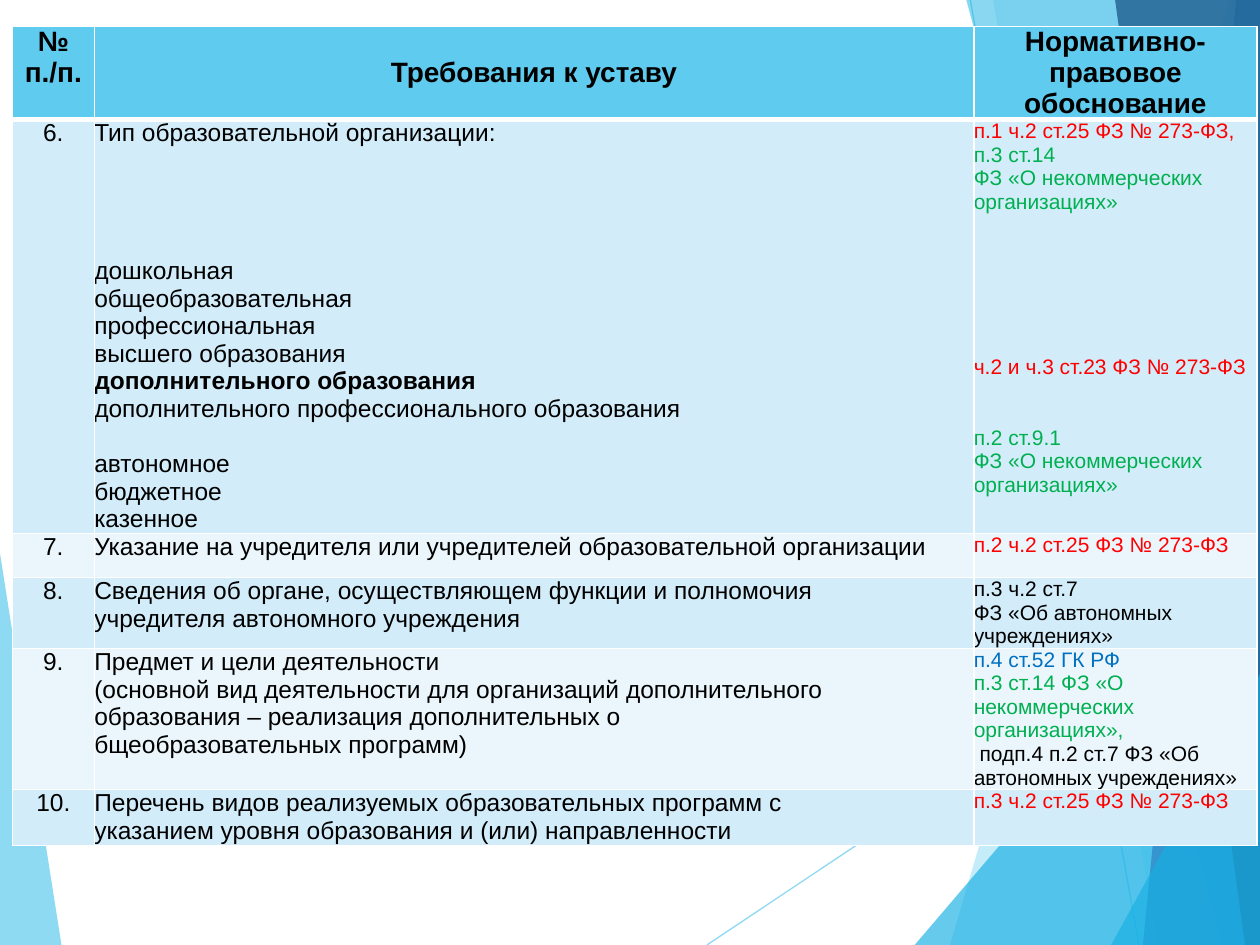
from dataclasses import dataclass

import pptx
import pptx.util
import pptx.dml.color
import pptx.enum.text
import pptx.oxml
import pptx.oxml.ns

Cm = pptx.util.Cm
ALIGN = pptx.enum.text.PP_ALIGN
NAMESPACE = pptx.oxml.ns.nsdecls("a")


@dataclass(frozen=True)
class Theme:
    font: str = "Arial"
    header_size: int = 16
    body_size: int = 14
    reference_size: int = 12
    black: str = "000000"
    white: str = "FFFFFF"
    red: str = "FF0000"
    green: str = "00B050"
    blue: str = "0070C0"
    sky: str = "5FCBEF"
    azure: str = "17B0E4"
    steel: str = "2E83C3"
    navy: str = "226292"
    band_dark: str = "D2ECF9"
    band_light: str = "EAF6FC"


THEME = Theme()


@dataclass(frozen=True)
class Facet:
    color: str
    opacity: int
    points: tuple[tuple[float, float], ...]


@dataclass(frozen=True)
class Ray:
    start: tuple[float, float]
    end: tuple[float, float]


@dataclass(frozen=True)
class Line:
    text: str
    color: str = THEME.black
    bold: bool = False
    space_before: float = 0


@dataclass(frozen=True)
class Requirement:
    number: str
    height: float
    lines: tuple[Line, ...]
    references: tuple[Line, ...]


# Slide and table measures, in centimetres
WIDTH, HEIGHT = 25.4, 19.05
TABLE_LEFT, TABLE_TOP = 0.25, 0.53
COLUMN_WIDTHS = (1.65, 17.73, 5.71)
HEADER_HEIGHT = 1.88

# Background decoration, from back to front
RAYS = (Ray((14.25, HEIGHT), (WIDTH, 11.61)), Ray((19.56, 0), (22.96, HEIGHT)))
LEFT_FACET = Facet(THEME.sky, 70, ((0, 11.15), (1.24, HEIGHT), (0, HEIGHT)))


def right_facet(color: str, opacity: int, top_x: float, bottom_x: float, top: float = 0) -> Facet:
    """A facet that runs from its slanted edge to the right edge of the slide."""
    return Facet(color, opacity, ((top_x, top), (bottom_x, HEIGHT), (WIDTH, HEIGHT), (WIDTH, top)))


RIGHT_FACETS = (
    right_facet(THEME.sky, 36, 24.77, 19.15),
    right_facet(THEME.sky, 20, 20.02, 23.34),
    right_facet(THEME.azure, 66, WIDTH, 18.44, 10.9),
    right_facet(THEME.azure, 50, 19.48, 24.64),
    right_facet(THEME.steel, 70, 24.92, 23.04),
    right_facet(THEME.navy, 82, 22.48, 25.1),
    right_facet(THEME.azure, 66, WIDTH, 22.4, 13.59),
)

# Table content
HEADERS = (("№", "п./п."), ("Требования к уставу",), ("Нормативно-правовое обоснование",))
NONCOMMERCIAL = Line("ФЗ «О некоммерческих организациях»", THEME.green)
REQUIREMENTS = (
    Requirement("6.", 8.32, (
        Line("Тип образовательной организации:"),
        Line("дошкольная", space_before=63),
        Line("общеобразовательная"),
        Line("профессиональная"),
        Line("высшего образования"),
        Line("дополнительного образования", bold=True),
        Line("дополнительного профессионального образования"),
        Line("автономное", space_before=16),
        Line("бюджетное"),
        Line("казенное"),
    ), (
        Line("п.1 ч.2 ст.25 ФЗ № 273-ФЗ,", THEME.red),
        Line("п.3 ст.14", THEME.green),
        NONCOMMERCIAL,
        Line("ч.2 и ч.3 ст.23 ФЗ № 273-ФЗ", THEME.red, space_before=81),
        Line("п.2 ст.9.1", THEME.green, space_before=27),
        NONCOMMERCIAL,
    )),
    Requirement("7.", 0.89, (
        Line("Указание на учредителя или учредителей образовательной организации"),
    ), (Line("п.2 ч.2 ст.25 ФЗ № 273-ФЗ", THEME.red),)),
    Requirement("8.", 1.43, (
        Line("Сведения об органе, осуществляющем функции и полномочия"),
        Line("учредителя автономного учреждения"),
    ), (Line("п.3 ч.2 ст.7"), Line("ФЗ «Об автономных учреждениях»"))),
    Requirement("9.", 2.84, (
        Line("Предмет и цели деятельности"),
        Line("(основной вид деятельности для организаций дополнительного"),
        Line("образования – реализация дополнительных о"),
        Line("бщеобразовательных программ)"),
    ), (
        Line("п.4 ст.52 ГК РФ", THEME.blue),
        Line("п.3 ст.14 ФЗ «О некоммерческих организациях»,", THEME.green),
        Line(" подп.4 п.2 ст.7 ФЗ «Об автономных учреждениях»"),
    )),
    Requirement("10.", 1.13, (
        Line("Перечень видов реализуемых образовательных программ с"),
        Line("указанием уровня образования и (или) направленности"),
    ), (Line("п.3 ч.2 ст.25 ФЗ № 273-ФЗ", THEME.red),)),
)


def rgb(color: str) -> pptx.dml.color.RGBColor:
    return pptx.dml.color.RGBColor.from_string(color)


def set_opacity(shape, percent: int) -> None:
    for color in shape._element.spPr.iter(pptx.oxml.ns.qn("a:srgbClr")):
        color.append(pptx.oxml.parse_xml(f'<a:alpha {NAMESPACE} val="{percent * 1000}"/>'))


def draw_facet(slide, facet: Facet) -> None:
    points = [(Cm(x), Cm(y)) for x, y in facet.points]
    builder = slide.shapes.build_freeform(*points[0])
    builder.add_line_segments(points[1:], close=True)
    shape = builder.convert_to_shape()
    shape.shadow.inherit = False
    shape.line.fill.background()
    shape.fill.solid()
    shape.fill.fore_color.rgb = rgb(facet.color)
    set_opacity(shape, facet.opacity)


def draw_ray(slide, ray: Ray) -> None:
    ends = [Cm(value) for value in ray.start + ray.end]
    connector = slide.shapes.add_connector(pptx.enum.shapes.MSO_CONNECTOR.STRAIGHT, *ends)
    connector.line.color.rgb = rgb(THEME.sky)
    connector.line.width = pptx.util.Pt(0.75)
    set_opacity(connector, 70)
    connector._element.spPr.append(pptx.oxml.parse_xml(f"<a:effectLst {NAMESPACE}/>"))


def set_borders(cell, top: float = 1, bottom: float = 1) -> None:
    properties = cell._tc.get_or_add_tcPr()
    widths = {"lnL": 1, "lnR": 1, "lnT": top, "lnB": bottom}
    for position, (tag, width) in enumerate(widths.items()):
        properties.insert(position, pptx.oxml.parse_xml(
            f'<a:{tag} {NAMESPACE} w="{pptx.util.Pt(width)}"><a:solidFill>'
            f'<a:srgbClr val="{THEME.white}"/></a:solidFill></a:{tag}>'))


def fill_cell(cell, lines: tuple[Line, ...], size: int, alignment, fill: str) -> None:
    cell.margin_left = cell.margin_right = cell.margin_top = cell.margin_bottom = 0
    cell.fill.solid()
    cell.fill.fore_color.rgb = rgb(fill)
    cell.text_frame.text = "\n".join(line.text for line in lines)
    for paragraph, line in zip(cell.text_frame.paragraphs, lines):
        paragraph.alignment = alignment
        paragraph.space_before = pptx.util.Pt(line.space_before)
        for run in paragraph.runs:
            run.font.name = THEME.font
            run.font.size = pptx.util.Pt(size)
            run.font.bold = line.bold
            run.font.color.rgb = rgb(line.color)


def draw_table(slide) -> None:
    heights = [HEADER_HEIGHT] + [requirement.height for requirement in REQUIREMENTS]
    table = slide.shapes.add_table(
        len(heights), len(COLUMN_WIDTHS), Cm(TABLE_LEFT), Cm(TABLE_TOP),
        Cm(sum(COLUMN_WIDTHS)), Cm(sum(heights))).table
    for column, width in zip(table.columns, COLUMN_WIDTHS):
        column.width = Cm(width)
    for row, height in zip(table.rows, heights):
        row.height = Cm(height)

    # Header row
    for column, texts in enumerate(HEADERS):
        cell = table.cell(0, column)
        lines = tuple(Line(text, bold=True) for text in texts)
        fill_cell(cell, lines, THEME.header_size, ALIGN.CENTER, THEME.sky)
        set_borders(cell, bottom=3)
    table.cell(0, 1).vertical_anchor = pptx.enum.text.MSO_ANCHOR.MIDDLE

    # Requirement rows
    for row, requirement in enumerate(REQUIREMENTS, start=1):
        fill = THEME.band_dark if row % 2 else THEME.band_light
        columns = (
            ((Line(requirement.number),), THEME.body_size, ALIGN.CENTER),
            (requirement.lines, THEME.body_size, ALIGN.JUSTIFY),
            (requirement.references, THEME.reference_size, ALIGN.LEFT),
        )
        for column, (lines, size, alignment) in enumerate(columns):
            cell = table.cell(row, column)
            fill_cell(cell, lines, size, alignment, fill)
            set_borders(cell, top=3 if row == 1 else 1)


def main() -> None:
    presentation = pptx.Presentation()
    presentation.slide_width, presentation.slide_height = Cm(WIDTH), Cm(HEIGHT)
    slide = presentation.slides.add_slide(presentation.slide_layouts[6])
    draw_facet(slide, LEFT_FACET)
    for ray in RAYS:
        draw_ray(slide, ray)
    for facet in RIGHT_FACETS:
        draw_facet(slide, facet)
    draw_table(slide)
    presentation.save("out.pptx")


if __name__ == "__main__":
    main()
